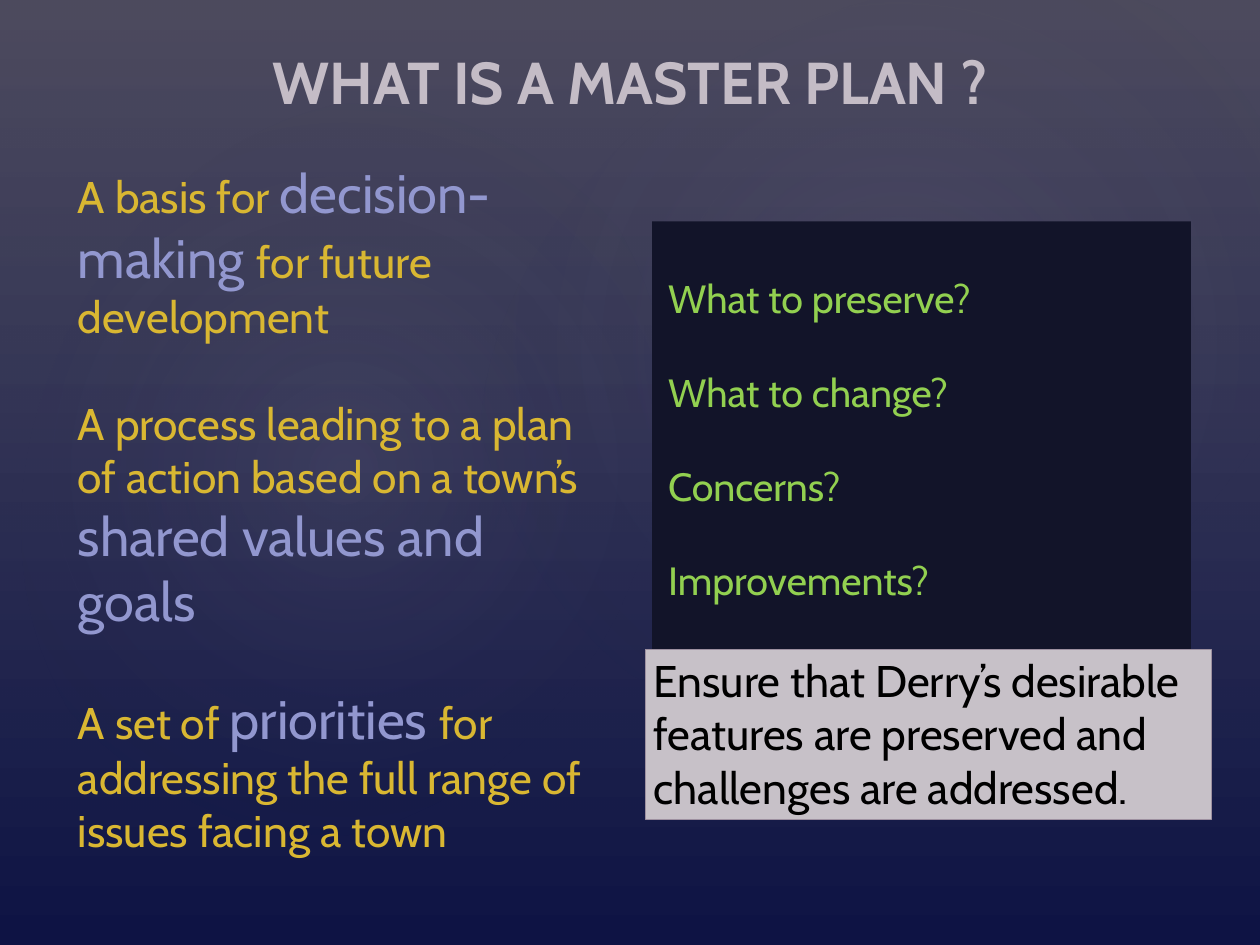
import pptx
import pptx.dml.color
import pptx.enum.shapes
import pptx.enum.text
import pptx.oxml
import pptx.oxml.ns
import pptx.util

Inches, Pt = pptx.util.Inches, pptx.util.Pt
SHAPE = pptx.enum.shapes.MSO_SHAPE
ANCHOR = pptx.enum.text.MSO_ANCHOR
ALIGN = pptx.enum.text.PP_ALIGN
qn = pptx.oxml.ns.qn

WIDTH, HEIGHT = 14.22, 10.67
FONT = "Cabin"
GOLD, LILAC, GREEN, PALE = "D9B732", "9297CF", "92D050", "C4BCC6"

QUESTIONS = ["What to preserve?", "What to change?", "Concerns?", "Improvements?"]
# Each paragraph is a list of (text, is key phrase).
DEFINITIONS = [
    [("A basis for ", False), ("decision-making ", True),
     ("for future development", False)],
    [("A process leading to a plan of action based on a town’s ", False),
     ("shared values and goals", True)],
    [("A set of ", False), ("priorities ", True),
     ("for addressing the full range of issues facing a town", False)],
]


def rgb(color):
    return pptx.dml.color.RGBColor.from_string(color)


def set_gradient(fill, element, stops, circle=False):
    """Apply two (position %, colour, opacity %) stops, top down or from the centre."""
    fill.gradient()
    fill.gradient_angle = 270
    for stop, gs, (position, color, opacity) in zip(
            fill.gradient_stops, element.iter(qn("a:gs")), stops):
        stop.position = position / 100
        stop.color.rgb = rgb(color)
        if opacity < 100:
            alpha = gs[0].makeelement(qn("a:alpha"), {"val": str(opacity * 1000)})
            gs[0].append(alpha)
    if circle:
        lin = next(element.iter(qn("a:lin")))
        lin.getparent().replace(lin, pptx.oxml.parse_xml(
            f'<a:path {pptx.oxml.ns.nsdecls("a")} path="circle">'
            '<a:fillToRect l="50000" t="50000" r="50000" b="50000"/></a:path>'))


def add_plain_shape(s, kind, left, top, width, height):
    sp = s.shapes.add_shape(kind, Inches(left), Inches(top), Inches(width), Inches(height))
    sp.shadow.inherit = False
    sp.line.fill.background()
    return sp


def add_glow(s, left, top, width, height, rotation):
    sp = add_plain_shape(s, SHAPE.OVAL, left, top, width, height)
    sp.rotation = rotation
    set_gradient(sp.fill, sp.element, [(0, PALE, 8), (58, "242852", 0)], circle=True)


def add_panel(s, left, top, width, height, color):
    sp = add_plain_shape(s, SHAPE.RECTANGLE, left, top, width, height)
    sp.fill.solid()
    sp.fill.fore_color.rgb = rgb(color)
    return sp


def set_frame(sp, left=0.1, top=0.05, anchor=ANCHOR.TOP):
    tf = sp.text_frame
    tf.word_wrap = True
    tf.vertical_anchor = anchor
    tf.margin_left, tf.margin_right = Inches(left), Inches(0.1)
    tf.margin_top, tf.margin_bottom = Inches(top), Inches(0.05)
    return tf


def set_font(font, size, color, bold=False):
    font.name, font.size, font.bold = FONT, Pt(size), bold
    font.color.rgb = rgb(color)


def write_paragraphs(tf, texts, size, color, gap=0, align=ALIGN.LEFT):
    for i, text in enumerate(texts):
        p = tf.paragraphs[0] if i == 0 else tf.add_paragraph()
        p.text = text
        p.alignment = align
        if i:
            p.space_before = Pt(gap)
        set_font(p.font, size, color)


def add_background(s):
    set_gradient(s.background.fill, s.element, [(0, "4B4D65", 100), (100, "0C1143", 100)])
    veil = add_plain_shape(s, SHAPE.RECTANGLE, 0, 0, WIDTH, HEIGHT)
    set_gradient(veil.fill, veil.element, [(0, "504652", 36), (100, "242852", 10)])
    add_glow(s, -0.43, 1.81, 8.61, 6.97, 294.3)
    add_glow(s, 5.1, 0.18, 10.08, 7.4, 328.7)


def add_title(s, text):
    title = s.shapes.title
    title.left, title.top = Inches(0), Inches(0.41)
    title.width, title.height = Inches(WIDTH), Inches(1)
    tf = set_frame(title, anchor=ANCHOR.MIDDLE)
    write_paragraphs(tf, [text], 48, PALE, align=ALIGN.CENTER)
    tf.paragraphs[0].font.bold = True
    title.element.getparent().append(title.element)  # in front of the background


def add_definitions(s):
    box = s.shapes.add_textbox(Inches(0.78), Inches(1.75), Inches(5.92), Inches(8.65))
    tf = set_frame(box)
    for i, runs in enumerate(DEFINITIONS):
        p = tf.paragraphs[0] if i == 0 else tf.add_paragraph()
        if i:
            p.space_before = Pt(43.5)
        for text, is_key in runs:
            r = p.add_run()
            r.text = text
            set_font(r.font, 44 if is_key else 36, LILAC if is_key else GOLD)


def main():
    prs = pptx.Presentation()
    prs.slide_width, prs.slide_height = Inches(WIDTH), Inches(HEIGHT)
    s = prs.slides.add_slide(prs.slide_layouts[5])
    add_background(s)
    add_title(s, "WHAT IS A MASTER PLAN ?")

    questions = add_panel(s, 7.36, 2.5, 6.08, 5.43, "121429")
    write_paragraphs(set_frame(questions, left=0.18, top=0.6), QUESTIONS, 32, GREEN, gap=38)

    add_definitions(s)

    aim = add_panel(s, 7.28, 7.33, 6.39, 1.92, "C7C1C8")
    aim.line.color.rgb = rgb("9D90A0")
    aim.line.width = Pt(0.75)
    write_paragraphs(
        set_frame(aim),
        ["Ensure that Derry’s desirable features are preserved and challenges are addressed."],
        36, "000000")
    prs.save("out.pptx")


if __name__ == "__main__":
    main()
